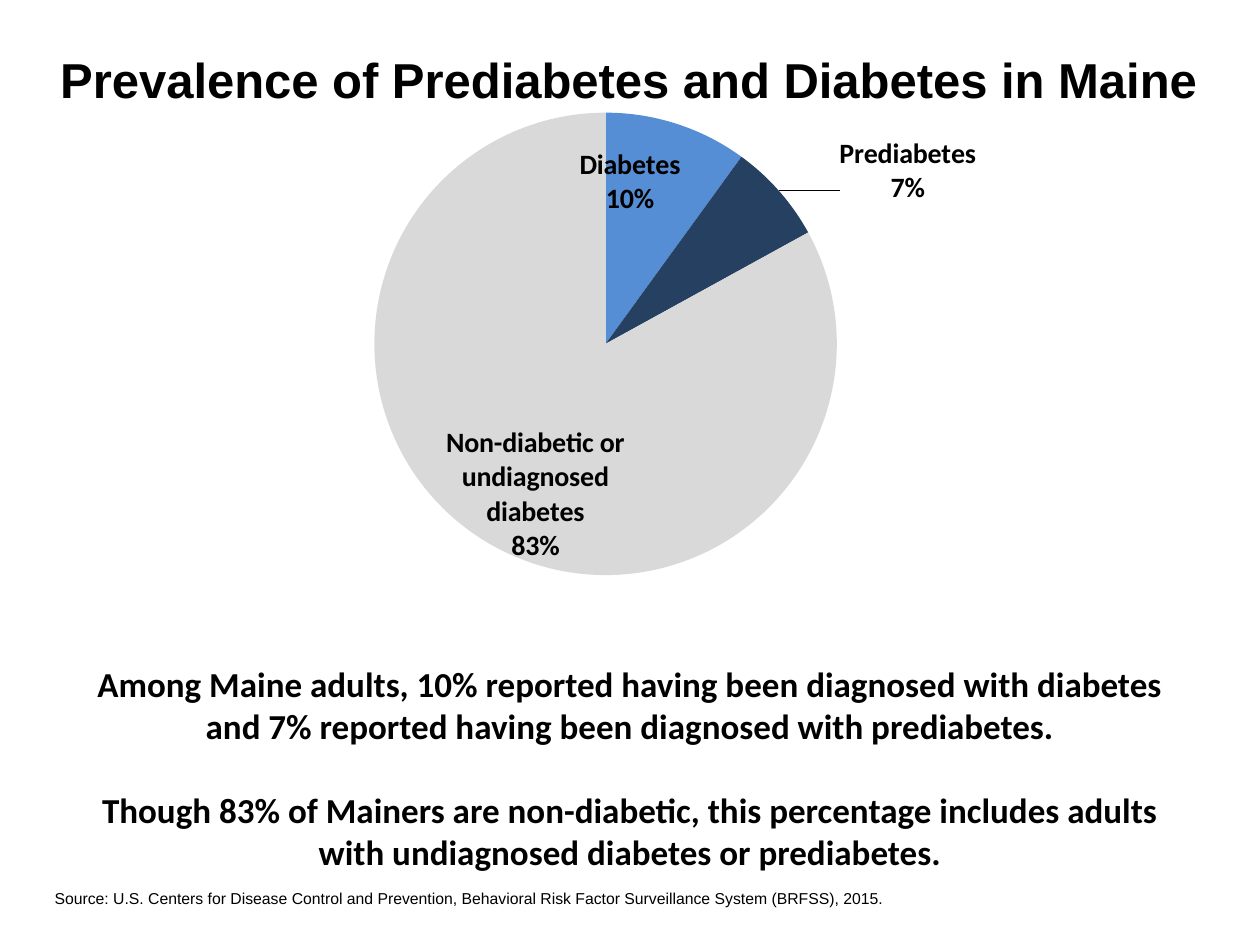
import pptx
import pptx.chart.data
import pptx.dml.color
import pptx.enum.chart
import pptx.enum.text
import pptx.oxml
import pptx.oxml.ns
import pptx.util

Cm = pptx.util.Cm
Pt = pptx.util.Pt
RGB = pptx.dml.color.RGBColor.from_string
CENTER = pptx.enum.text.PP_ALIGN.CENTER


class Theme:
    text = "000000"
    diabetes = "558ED5"
    prediabetes = "254061"
    non_diabetic = "D9D9D9"
    heading_font = "Arial"
    body_font = "Calibri"
    title_size = 28
    body_size = 20
    label_size = 16
    source_size = 9


def style(font, name, size, bold):
    font.name = name
    font.size = Pt(size)
    font.bold = bold
    font.color.rgb = RGB(Theme.text)


def layout_xml(**settings):
    """Manual chart layout, as fractions of the chart area."""
    entries = "".join(f'<c:{key} val="{value}"/>' for key, value in settings.items())
    return pptx.oxml.parse_xml(
        f'<c:layout {pptx.oxml.ns.nsdecls("c")}>'
        f"<c:manualLayout>{entries}</c:manualLayout></c:layout>"
    )


deck = pptx.Presentation()
deck.slide_width, deck.slide_height = Cm(25.4), Cm(19.05)
slide = deck.slides.add_slide(deck.slide_layouts[5])

# Title
title = slide.shapes.title
title.left, title.top, title.width, title.height = Cm(0.58), Cm(0), Cm(24.18), Cm(3.18)
title.text_frame.text = "Prevalence of Prediabetes and Diabetes in Maine"
title.text_frame.vertical_anchor = pptx.enum.text.MSO_ANCHOR.MIDDLE
heading = title.text_frame.paragraphs[0]
heading.alignment = CENTER
style(heading.font, Theme.heading_font, Theme.title_size, True)

# Pie: category, percentage, colour, label shift from the slice centre
slices = [
    ("Diabetes", 10, Theme.diabetes, (-0.01, -0.08)),
    ("Prediabetes", 7, Theme.prediabetes, (0.19, -0.15)),
    ("Non-diabetic or undiagnosed diabetes", 83, Theme.non_diabetic, (-0.01, 0.08)),
]
prevalence = pptx.chart.data.CategoryChartData()
prevalence.categories = [category for category, *_ in slices]
prevalence.add_series("Series 1", [share for _, share, *_ in slices])
pie = slide.shapes.add_chart(
    pptx.enum.chart.XL_CHART_TYPE.PIE, Cm(3.18), Cm(0.2), Cm(22.86), Cm(12.95), prevalence
).chart
pie.has_title = False
pie.has_legend = False
pie.font.name = Theme.body_font
pie.font.size = Pt(18)
pie.plots[0].vary_by_categories = False

plot_area = pie.element.find(".//" + pptx.oxml.ns.qn("c:plotArea"))
for old_layout in plot_area.findall(pptx.oxml.ns.qn("c:layout")):
    plot_area.remove(old_layout)
plot_area.insert(0, layout_xml(
    layoutTarget="inner", xMode="edge", yMode="edge", x=0.02, y=0.16, w=0.75, h=0.72))

# Slice colours and labels
series = pie.plots[0].series[0]
labels = series.data_labels
labels.show_category_name = True
labels.show_percentage = True
labels.show_value = False
style(labels.font, Theme.body_font, Theme.label_size, True)
for index, (_, _, colour, _) in enumerate(slices):
    point = series.points[index]
    point.format.fill.solid()
    point.format.fill.fore_color.rgb = RGB(colour)
    point.data_label.position = pptx.enum.chart.XL_LABEL_POSITION.CENTER
    style(point.data_label.font, Theme.body_font, Theme.label_size, True)

shown = {"showVal": "0", "showCatName": "1", "showPercent": "1"}
label_elements = pie.element.findall(".//" + pptx.oxml.ns.qn("c:dLbl"))
for label, (_, _, _, (shift_x, shift_y)) in zip(label_elements, slices):
    label.insert(1, layout_xml(x=shift_x, y=shift_y))
    for tag, value in shown.items():
        label.find(pptx.oxml.ns.qn("c:" + tag)).set("val", value)
    label.append(pptx.oxml.parse_xml(
        f'<c:separator {pptx.oxml.ns.nsdecls("c")}>\n</c:separator>'))

# Source line
source = slide.shapes.add_textbox(Cm(0.85), Cm(17.8), Cm(19.61), Cm(0.89)).text_frame
source.word_wrap = True
source.text = (
    "Source: U.S. Centers for Disease Control and Prevention, "
    "Behavioral Risk Factor Surveillance System (BRFSS), 2015."
)
style(source.paragraphs[0].font, Theme.heading_font, Theme.source_size, False)

# Findings
findings = slide.shapes.add_textbox(Cm(1.27), Cm(13.23), Cm(22.86), Cm(4.52)).text_frame
findings.word_wrap = True
findings.text = (
    "Among Maine adults, 10% reported having been diagnosed with diabetes "
    "and 7% reported having been diagnosed with prediabetes.\n"
    "Though 83% of Mainers are non-diabetic, this percentage includes adults "
    "with undiagnosed diabetes or prediabetes."
)
for finding in findings.paragraphs:
    finding.alignment = CENTER
    style(finding.font, Theme.body_font, Theme.body_size, True)
findings.paragraphs[1].space_before = Pt(24)

deck.save("out.pptx")
